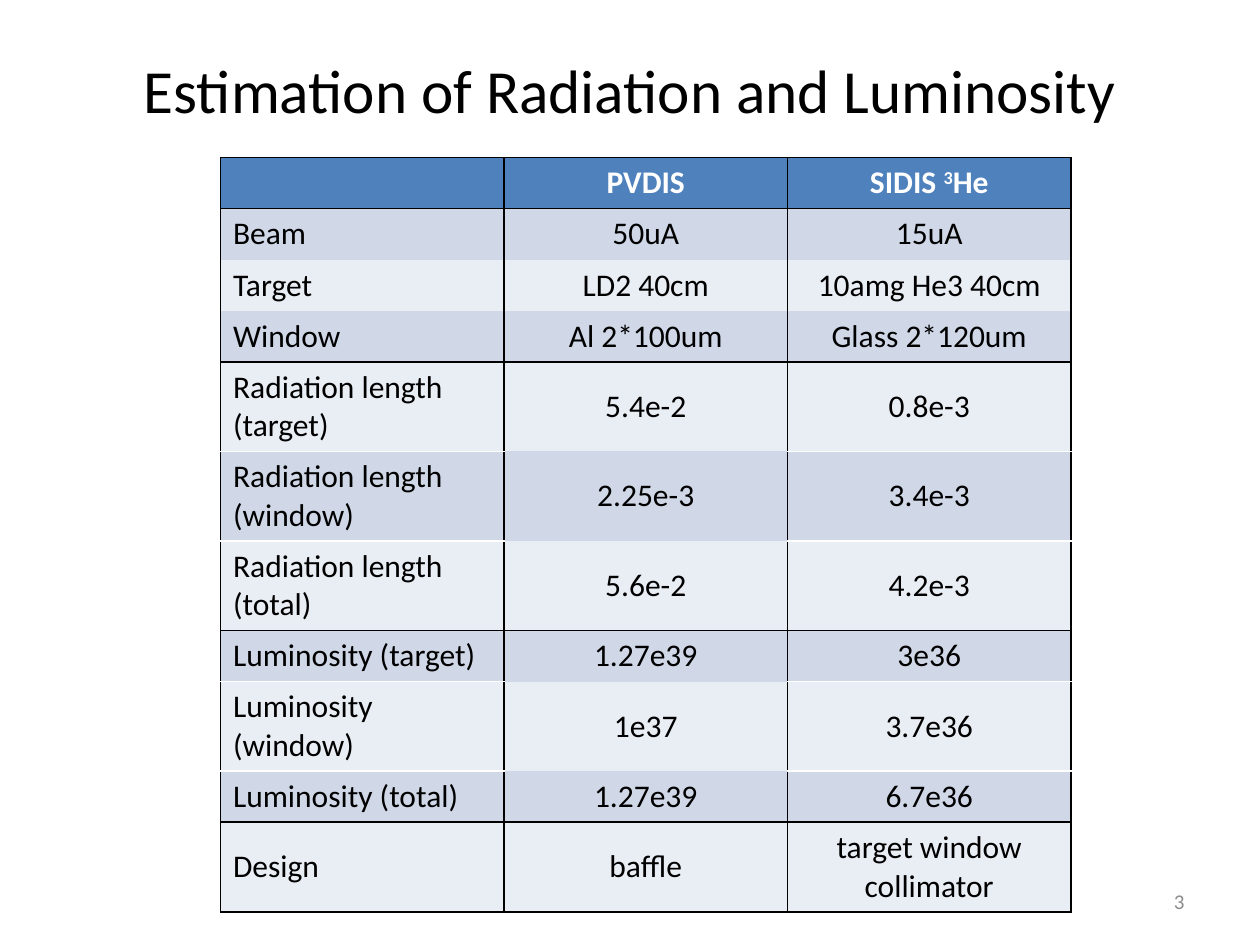
from lxml import etree
from pptx import Presentation
from pptx.dml.color import RGBColor
from pptx.enum.text import MSO_ANCHOR, MSO_AUTO_SIZE, PP_ALIGN
from pptx.oxml.ns import qn
from pptx.util import Pt

LEFT, CENTER, RIGHT = PP_ALIGN.LEFT, PP_ALIGN.CENTER, PP_ALIGN.RIGHT
TOP, MIDDLE = MSO_ANCHOR.TOP, MSO_ANCHOR.MIDDLE
NO_AUTOFIT = MSO_AUTO_SIZE.NONE
TITLE_ONLY = 5

BLACK, WHITE, GREY = "000000", "FFFFFF", "8C8C8C"
HEADER_FILL, ODD_FILL, EVEN_FILL = "4F81BD", "D0D8E8", "E9EDF4"

HEADER = ["", "PVDIS", [("SIDIS ", 0), ("3", 30), ("He", 0)]]
# Groups are separated by black lines.
GROUPS = [
    [HEADER],
    [["Beam", "50uA", "15uA"],
     ["Target", "LD2 40cm", "10amg He3 40cm"],
     ["Window", "Al 2*100um", "Glass 2*120um"]],
    [["Radiation length (target)", "5.4e-2", "0.8e-3"],
     ["Radiation length (window)", "2.25e-3", "3.4e-3"],
     ["Radiation length (total)", "5.6e-2", "4.2e-3"]],
    [["Luminosity (target)", "1.27e39", "3e36"],
     ["Luminosity (window)", "1e37", "3.7e36"],
     ["Luminosity (total)", "1.27e39", "6.7e36"]],
    [["Design", "baffle", "target window collimator"]],
]
RULED_GROUPS = (2, 3)  # white lines between rows in the outer columns
ROW_HEIGHT = 29.2


def rgb(color):
    return RGBColor.from_string(color)


def write(tf, text, size=18, color=BLACK, bold=False, align=LEFT):
    """Write a string, or a list of (text, baseline percent) runs."""
    tf.word_wrap = True
    p = tf.paragraphs[0]
    p.alignment = align
    runs = [(text, 0)] if isinstance(text, str) else text
    for part, baseline in runs:
        r = p.add_run()
        r.text = part
        r.font.name = "Calibri"
        r.font.size = Pt(size)
        r.font.bold = bold
        r.font.color.rgb = rgb(color)
        if baseline:
            r.font._element.set("baseline", str(baseline * 1000))


def set_borders(cell, **sides):
    """Draw 1 pt lines on sides L, R, T, B; None means no line."""
    tc_pr = cell._tc.get_or_add_tcPr()
    for i, side in enumerate("LRTB"):
        ln = etree.Element(qn(f"a:ln{side}"), w=str(Pt(1)))
        color = sides[side]
        if color:
            fill = etree.SubElement(ln, qn("a:solidFill"))
            etree.SubElement(fill, qn("a:srgbClr"), val=color)
        else:
            etree.SubElement(ln, qn("a:noFill"))
        tc_pr.insert(i, ln)


def add_title(s, text, x, y, w, h):
    sp = s.shapes.title
    sp.left, sp.top, sp.width, sp.height = Pt(x), Pt(y), Pt(w), Pt(h)
    tf = sp.text_frame
    tf.auto_size = NO_AUTOFIT
    tf.vertical_anchor = MIDDLE
    write(tf, text, size=35, align=CENTER)


def add_estimates(s, x, y, w):
    rows = [(g, i, row) for g, group in enumerate(GROUPS)
            for i, row in enumerate(group)]
    n_cols = len(HEADER)
    table = s.shapes.add_table(len(rows), n_cols, Pt(x), Pt(y), Pt(w),
                               Pt(ROW_HEIGHT * len(rows))).table
    for column in table.columns:
        column.width = Pt(w / n_cols)
    for n, (g, i, row) in enumerate(rows):
        table.rows[n].height = Pt(ROW_HEIGHT)
        is_header = n == 0
        for c, text in enumerate(row):
            cell = table.cell(n, c)
            cell.vertical_anchor = TOP if is_header else MIDDLE
            cell.fill.solid()
            cell.fill.fore_color.rgb = rgb(
                HEADER_FILL if is_header else ODD_FILL if n % 2 else EVEN_FILL)
            inner = WHITE if g in RULED_GROUPS and c != 1 else None
            set_borders(cell, L=BLACK, R=BLACK,
                        T=BLACK if i == 0 else inner,
                        B=BLACK if i == len(GROUPS[g]) - 1 else inner)
            write(cell.text_frame, text, bold=is_header,
                  color=WHITE if is_header else BLACK,
                  align=CENTER if c else LEFT)


def add_page_number(s, text, x, y, w, h):
    tf = s.shapes.add_textbox(Pt(x), Pt(y), Pt(w), Pt(h)).text_frame
    tf.vertical_anchor = MIDDLE
    write(tf, text, size=12, color=GREY, align=RIGHT)


def main():
    prs = Presentation()
    prs.slide_width, prs.slide_height = Pt(720), Pt(540)
    s = prs.slides.add_slide(prs.slide_layouts[TITLE_ONLY])
    add_title(s, "Estimation of Radiation and Luminosity", 36, 6, 648, 90)
    add_estimates(s, 126, 90, 486)
    add_page_number(s, "3", 516, 500.5, 168, 28.75)
    prs.save("out.pptx")


if __name__ == "__main__":
    main()
